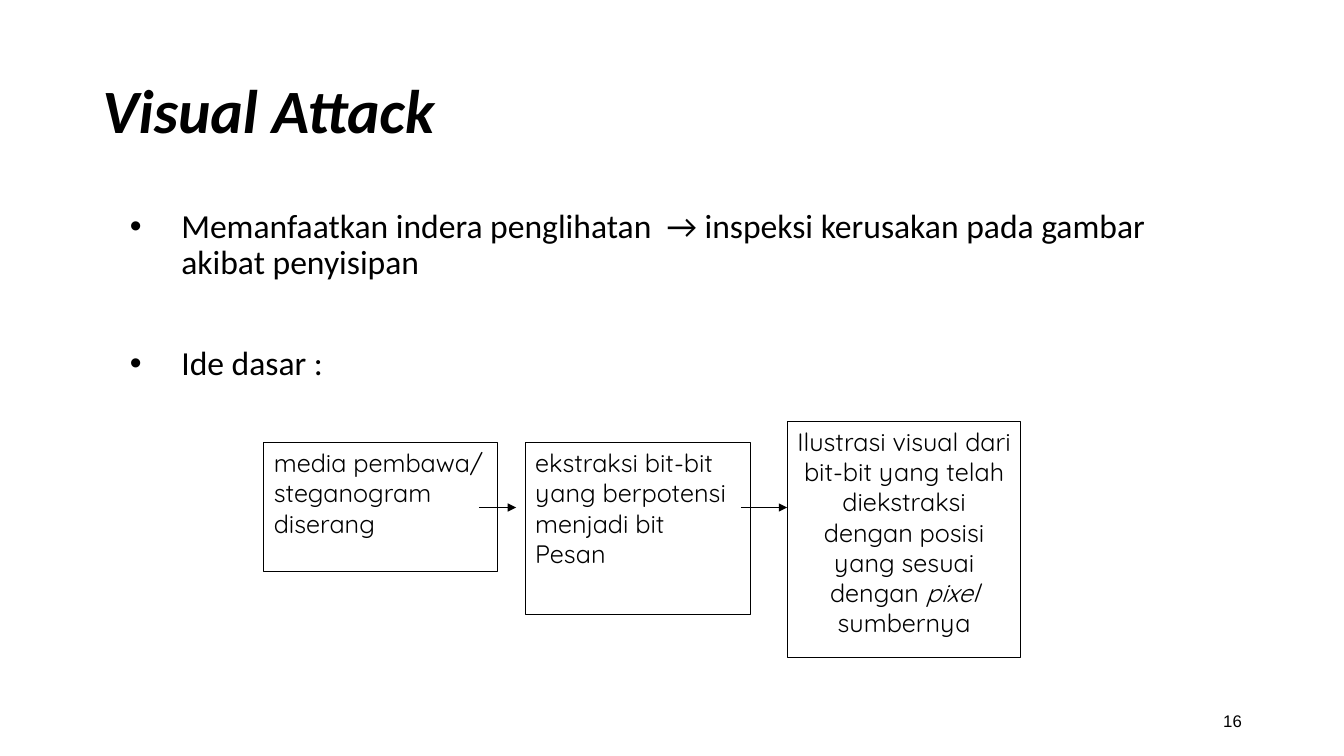
"""Build the Visual Attack slide with its three-step flow diagram."""
from dataclasses import dataclass

from lxml import etree
from pptx import Presentation
from pptx.dml.color import RGBColor
from pptx.enum import shapes, text
from pptx.oxml import ns
from pptx.util import Pt

BLACK = RGBColor(0, 0, 0)
WHITE = RGBColor(255, 255, 255)
LINE_WIDTH = Pt(0.75)
BULLET_INDENT = Pt(36.75)


@dataclass(frozen=True)
class Label:
    """A plain text box holding one or more paragraphs."""
    left: float
    top: float
    width: float
    height: float
    lines: tuple[str, ...]
    size: float
    font: str = "Calibri"
    emphasis: bool = False
    bulleted: bool = False
    line_spacing: float = 0.9
    gap: float = 0
    align: text.PP_ALIGN = text.PP_ALIGN.LEFT
    anchor: text.MSO_ANCHOR = text.MSO_ANCHOR.MIDDLE


@dataclass(frozen=True)
class Step:
    """A box of the flow; its runs alternate upright and italic."""
    left: float
    top: float
    width: float
    height: float
    runs: tuple[str, ...]
    align: text.PP_ALIGN = text.PP_ALIGN.LEFT


@dataclass(frozen=True)
class Arrow:
    """A horizontal arrow between two steps."""
    start: float
    end: float


ARROW_Y = 362.5
LABELS = (
    Label(66, 29, 828, 104.4, ("Visual Attack",), 44, emphasis=True),
    Label(85.7, 146.2, 800.6, 338.4,
          ("Memanfaatkan indera penglihatan  → inspeksi kerusakan pada gambar akibat penyisipan",
           "Ide dasar :"),
          24, bulleted=True, gap=46, anchor=text.MSO_ANCHOR.TOP),
    Label(678.2, 500.4, 216, 28.8, ("16",), 12, font="Arial", line_spacing=1,
          align=text.PP_ALIGN.RIGHT),
)
STEPS = (
    Step(188.5, 316.1, 167, 92.2, ("media pembawa/ steganogram diserang",)),
    Step(375.2, 316.1, 160.8, 123.1, ("ekstraksi bit-bit yang berpotensi menjadi bit Pesan",)),
    Step(562.3, 300.9, 167, 169,
         ("Ilustrasi visual dari bit-bit yang telah diekstraksi dengan posisi yang sesuai dengan ",
          "pixel", " sumbernya"), text.PP_ALIGN.CENTER),
)
ARROWS = (Arrow(342, 368.6), Arrow(529.2, 562.3))


def style_font(font: text, name: str, size: float) -> None:
    """Set the face, size and black colour of a font."""
    font.name = name
    font.size = Pt(size)
    font.color.rgb = BLACK


def add_bullet(paragraph) -> None:
    """Give a paragraph a round bullet and a hanging indent."""
    properties = paragraph._p.get_or_add_pPr()
    properties.set("marL", str(BULLET_INDENT))
    properties.set("indent", str(-BULLET_INDENT))
    etree.SubElement(properties, ns.qn("a:buFont"), typeface="Arial")
    etree.SubElement(properties, ns.qn("a:buChar"), char="•")


def add_label(slide, label: Label) -> None:
    """Draw a text box."""
    box = slide.shapes.add_textbox(
        Pt(label.left), Pt(label.top), Pt(label.width), Pt(label.height))
    frame = box.text_frame
    frame.word_wrap = True
    frame.vertical_anchor = label.anchor
    for index, line in enumerate(label.lines):
        paragraph = frame.add_paragraph() if index else frame.paragraphs[0]
        paragraph.text = line
        if label.bulleted:
            add_bullet(paragraph)
        paragraph.alignment = label.align
        paragraph.line_spacing = label.line_spacing
        if index:
            paragraph.space_before = Pt(label.gap)
        style_font(paragraph.font, label.font, label.size)
        paragraph.font.bold = paragraph.font.italic = label.emphasis


def add_step(slide, step: Step) -> None:
    """Draw an outlined box with its wording."""
    shape = slide.shapes.add_shape(
        shapes.MSO_SHAPE.RECTANGLE,
        Pt(step.left), Pt(step.top), Pt(step.width), Pt(step.height))
    shape.shadow.inherit = False
    shape.fill.solid()
    shape.fill.fore_color.rgb = WHITE
    shape.line.color.rgb = BLACK
    shape.line.width = LINE_WIDTH
    frame = shape.text_frame
    frame.word_wrap = True
    frame.vertical_anchor = text.MSO_ANCHOR.TOP
    paragraph = frame.paragraphs[0]
    paragraph.alignment = step.align
    style_font(paragraph.font, "Quicksand", 18)
    for index, wording in enumerate(step.runs):
        run = paragraph.add_run()
        run.text = wording
        run.font.italic = index % 2 == 1


def add_arrow(slide, arrow: Arrow) -> None:
    """Draw an arrow with a triangular head."""
    connector = slide.shapes.add_connector(
        shapes.MSO_CONNECTOR.STRAIGHT,
        Pt(arrow.start), Pt(ARROW_Y), Pt(arrow.end), Pt(ARROW_Y))
    connector.line.color.rgb = BLACK
    connector.line.width = LINE_WIDTH
    etree.SubElement(connector.line._get_or_add_ln(), ns.qn("a:tailEnd"), type="triangle")
    etree.SubElement(connector._element.spPr, ns.qn("a:effectLst"))


def main() -> None:
    """Build and save the presentation."""
    presentation = Presentation()
    presentation.slide_width = Pt(960)
    presentation.slide_height = Pt(540)
    slide = presentation.slides.add_slide(presentation.slide_layouts[6])
    for label in LABELS:
        add_label(slide, label)
    for step in STEPS:
        add_step(slide, step)
    for arrow in ARROWS:
        add_arrow(slide, arrow)
    presentation.save("out.pptx")


if __name__ == "__main__":
    main()
